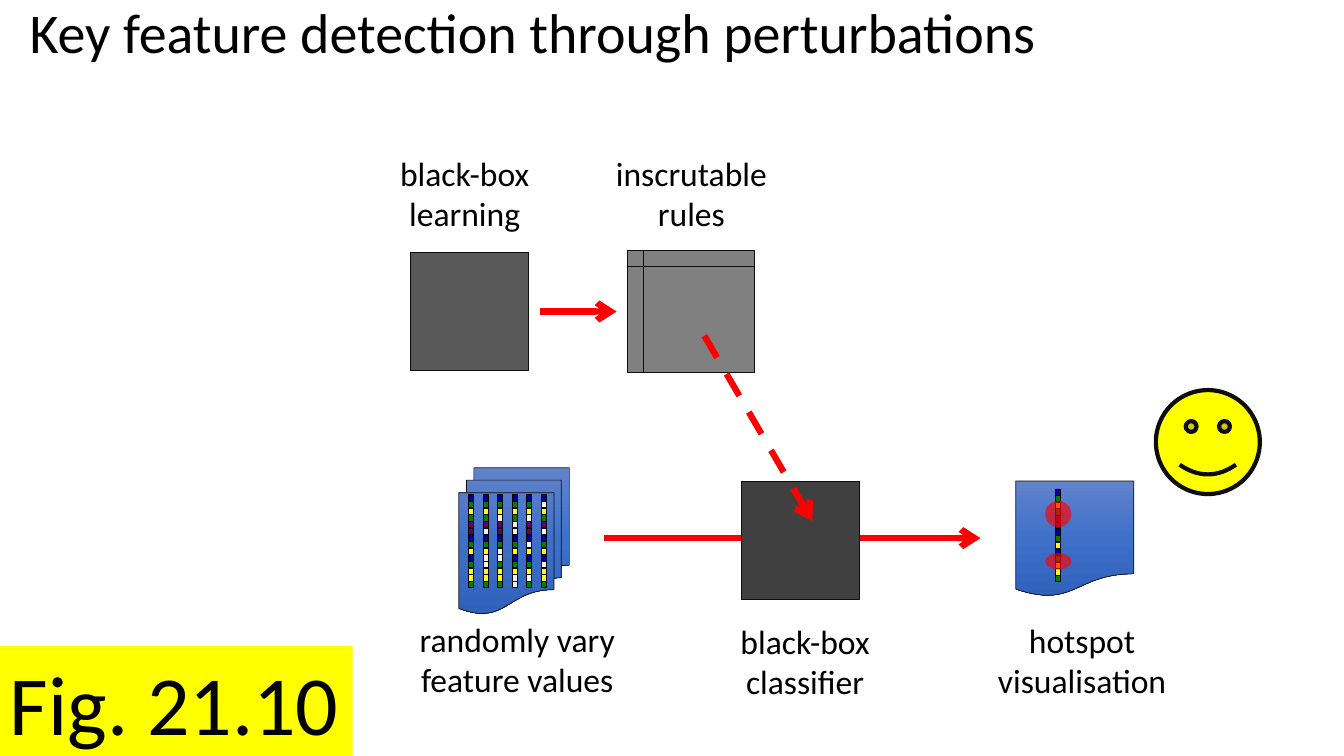
from copy import deepcopy

from lxml.etree import SubElement
from pptx import Presentation
from pptx.dml.color import RGBColor
from pptx.enum.dml import MSO_LINE
from pptx.enum.shapes import MSO_CONNECTOR, MSO_SHAPE
from pptx.enum.text import MSO_ANCHOR, PP_ALIGN
from pptx.oxml.ns import qn
from pptx.util import Cm, Pt

COLORS = {
    "ink": "000000", "outline": "0D0D0D", "arrow": "FF0000", "highlight": "FFFF00",
    "learner": "595959", "rules": "808080", "classifier": "404040",
}
DOCUMENT_STOPS = [(0, "6183CB"), (0.5, "3E70CA"), (1, "3062BB")]
FEATURE_COLORS = {
    "B": "000090", "G": "008000", "Y": "FFFF00", "P": "660066", "L": "F2F2F2", "W": "FFFFFF",
}
FULL_FEATURES = "BGYGPPBGYBGYYG"
VARIED_FEATURES = [
    FULL_FEATURES, "BGYGPLBGYLLYYG", "BGYLPPBGLLGYYG",
    "BGYGLLBGYBGYLL", "BGYWPPBWYBGYWG", "BWYGPWBGYBWYYG",
]
COLUMN_PITCH = 1.83 / 5
ROW_PITCH = 2.18 / 13
BOX_SIDE = 2.97


def rgb(value):
    return RGBColor.from_string(value)


def add_block(slide, kind, left, top, width, height, fill=None, outline=None, weight=0.5):
    block = slide.shapes.add_shape(kind, Cm(left), Cm(top), Cm(width), Cm(height))
    block.shadow.inherit = False
    if fill:
        block.fill.solid()
        block.fill.fore_color.rgb = rgb(fill)
    if outline:
        block.line.color.rgb = rgb(outline)
        block.line.width = Pt(weight)
    else:
        block.line.fill.background()
    return block


def add_document(slide, kind, left, top, width, height):
    """Document shape shaded from light at the top to dark at the bottom."""
    document = add_block(slide, kind, left, top, width, height, outline=COLORS["outline"])
    document.fill.gradient()
    document.fill.gradient_angle = 270
    stop_list = document._element.spPr.find(qn("a:gradFill")).find(qn("a:gsLst"))
    stop_list.insert(1, deepcopy(stop_list[0]))
    for stop, (position, color) in zip(document.fill.gradient_stops, DOCUMENT_STOPS):
        stop.position = position
        stop.color.rgb = rgb(color)


def set_text(frame, text, size, align=PP_ALIGN.LEFT):
    frame.vertical_anchor = MSO_ANCHOR.TOP
    paragraph = frame.paragraphs[0]
    paragraph.text = text
    paragraph.alignment = align
    paragraph.font.name = "Calibri"
    paragraph.font.size = Pt(size)
    paragraph.font.color.rgb = rgb(COLORS["ink"])
    return paragraph


def add_label(slide, text, left, top, width):
    label = slide.shapes.add_textbox(Cm(left), Cm(top), Cm(width), Cm(2.31))
    label.text_frame.word_wrap = False
    set_text(label.text_frame, text, 24, PP_ALIGN.CENTER)


def add_arrow(slide, start, end, dashed=False):
    arrow = slide.shapes.add_connector(
        MSO_CONNECTOR.STRAIGHT, *[Cm(value) for value in (*start, *end)])
    arrow.line.color.rgb = rgb(COLORS["arrow"])
    arrow.line.width = Pt(4.5)
    if dashed:
        arrow.line.dash_style = MSO_LINE.DASH
    properties = arrow._element.spPr
    SubElement(properties.find(qn("a:ln")), qn("a:tailEnd"), type="arrow")
    SubElement(properties, qn("a:effectLst"))


def add_feature_strip(slide, features, left, top):
    for row, feature in enumerate(features):
        add_block(slide, MSO_SHAPE.RECTANGLE, left, top + row * ROW_PITCH, 0.13, 0.16,
                  FEATURE_COLORS[feature], COLORS["ink"])


def add_hotspot(slide, left, top, width, height):
    hotspot = add_block(slide, MSO_SHAPE.OVAL, left, top, width, height, COLORS["arrow"])
    color = hotspot._element.spPr.find(qn("a:solidFill"))[0]
    SubElement(color, qn("a:alpha"), val="66000")


def add_title(slide, left, top, width, height):
    title = slide.shapes.add_textbox(Cm(left), Cm(top), Cm(width), Cm(height))
    title.text_frame.word_wrap = True
    heading = set_text(title.text_frame, "Key feature detection through perturbations", 40)
    heading.line_spacing = 0.9


def add_learning(slide, left, top):
    """Black-box learner and the rules it produces."""
    add_label(slide, "black-box\nlearning", left, top, 3.86)
    add_block(slide, MSO_SHAPE.RECTANGLE, left + 0.56, top + 2.64, BOX_SIDE, BOX_SIDE,
              COLORS["learner"], COLORS["outline"])
    add_block(slide, MSO_SHAPE.FLOWCHART_INTERNAL_STORAGE, left + 6.04, top + 2.59, 3.2, 3.07,
              COLORS["rules"], COLORS["outline"])
    add_label(slide, "inscrutable\nrules", left + 5.46, top, 4.37)
    add_arrow(slide, (left + 3.83, top + 4.12), (left + 5.76, top + 4.12))


def add_varied_inputs(slide, left, top):
    add_document(slide, MSO_SHAPE.FLOWCHART_MULTIDOCUMENT, left + 1.37, top, 2.79, 3.68)
    for column, features in enumerate(VARIED_FEATURES):
        add_feature_strip(slide, features, left + 1.62 + column * COLUMN_PITCH, top + 0.68)
    add_label(slide, "randomly vary\nfeature values", left, top + 3.68, 5.69)


def add_classifier(slide, left, top):
    """Classifier box, with the arrow that runs behind it."""
    add_arrow(slide, (left - 3.15, top + 1.42), (left + 6.35, top + 1.42))
    add_block(slide, MSO_SHAPE.RECTANGLE, left + 0.33, top, BOX_SIDE, BOX_SIDE,
              COLORS["classifier"], COLORS["outline"])
    add_label(slide, "black-box\nclassifier", left, top + 3.38, 3.86)


def add_visualisation(slide, left, top):
    add_document(slide, MSO_SHAPE.FLOWCHART_DOCUMENT, left + 0.73, top, 2.97, 2.92)
    add_feature_strip(slide, FULL_FEATURES, left + 1.72, top + 0.2)
    for offset, height in ((0.5, 0.66), (1.82, 0.41)):
        add_hotspot(slide, left + 1.47, top + offset, 0.66, height)
    add_label(slide, "hotspot\nvisualisation", left, top + 3.38, 4.8)
    add_block(slide, MSO_SHAPE.SMILEY_FACE, left + 4.26, top - 2.29, 2.62, 2.62,
              COLORS["highlight"], COLORS["outline"], 3)


def add_figure_number(slide, left, top, width, height):
    number = add_block(slide, MSO_SHAPE.RECTANGLE, left, top, width, height, COLORS["highlight"])
    number.text_frame.word_wrap = False
    set_text(number.text_frame, "Fig. 21.10", 60)


def main():
    deck = Presentation()
    deck.slide_width, deck.slide_height = Cm(33.87), Cm(19.05)
    slide = deck.slides.add_slide(deck.slide_layouts[6])
    add_title(slide, 0.5, 0, 32.84, 4.52)
    add_learning(slide, 9.78, 3.73)
    add_varied_inputs(slide, 10.19, 11.79)
    add_classifier(slide, 18.36, 12.14)
    add_visualisation(slide, 24.87, 12.12)
    add_arrow(slide, (17.75, 8.46), (20.47, 13.13), dashed=True)
    add_figure_number(slide, 0, 16.28, 8.89, 2.82)
    deck.save("out.pptx")


if __name__ == "__main__":
    main()
